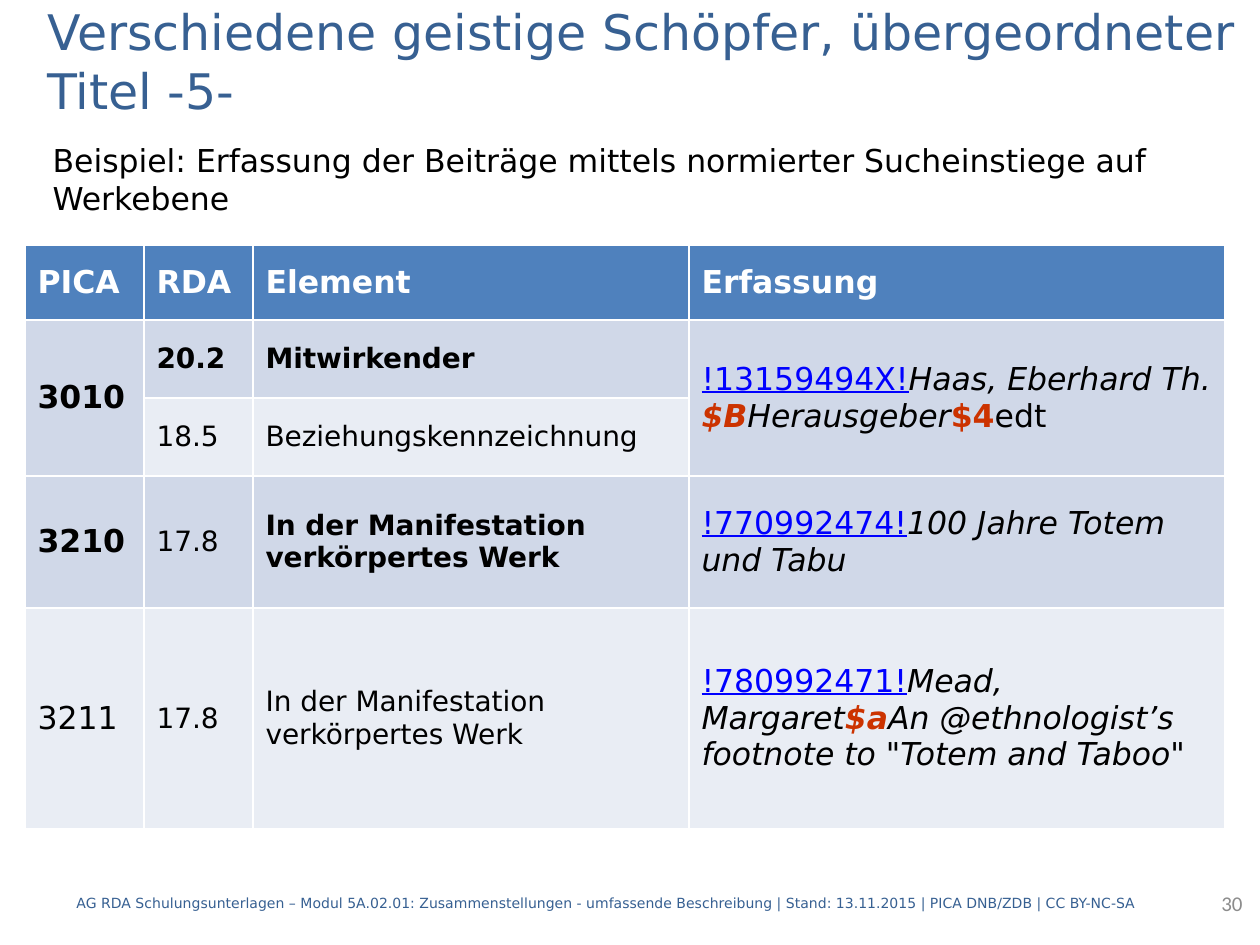
from pptx import Presentation
from pptx.dml.color import RGBColor
from pptx.enum.text import MSO_ANCHOR, MSO_AUTO_SIZE, PP_ALIGN
from pptx.util import Emu, Pt

FONT = "DejaVu Sans"
BLACK, WHITE, NAVY, GREY = "000000", "FFFFFF", "376092", "8C8C8C"
HEAD, BAND, PALE = "4F81BD", "D0D8E8", "E9EDF4"
BOLD = {"bold": True}
ITALIC = {"italic": True}
SMALL = {"size": Pt(16)}
LINK = {"color": "0000FF", "underline": True}
CODE = {"color": "CC3300", "bold": True}
WORK = "In der Manifestation verkörpertes Werk"


def px(n):
    return Emu(round(n * 914400 / 126))


def rgb(value):
    return RGBColor.from_string(value)


class Deck:
    """Holds the style and the current slide."""

    def __init__(self):
        self.prs = Presentation()
        self.prs.slide_width, self.prs.slide_height = px(1260), px(945)
        self.s = self.prs.slides.add_slide(self.prs.slide_layouts[1])

    def add_runs(self, tf, runs, fmt, align=PP_ALIGN.LEFT, gap=0):
        p = tf.paragraphs[0]
        p.alignment = align
        p.space_before = p.space_after = Pt(gap)
        for text, own in runs:
            r = p.add_run()
            r.text = text
            style = {"name": FONT, "color": BLACK, "bold": False, **fmt, **own}
            r.font.color.rgb = rgb(style.pop("color"))
            for name, value in style.items():
                setattr(r.font, name, value)
        return p

    def frame(self, sp, box, text, fmt, anchor=MSO_ANCHOR.MIDDLE, align=PP_ALIGN.LEFT):
        for name, value in zip(("left", "top", "width", "height"), box):
            setattr(sp, name, px(value))
        tf = sp.text_frame
        tf.word_wrap = True
        tf.auto_size = MSO_AUTO_SIZE.NONE
        tf.vertical_anchor = anchor
        return self.add_runs(tf, [(text, {})], fmt, align)

    def title(self, box, text, fmt):
        self.frame(self.s.shapes.title, box, text, fmt)

    def body(self, box, text, fmt):
        sp = self.s.placeholders[1]
        sp.fill.solid()
        sp.fill.fore_color.rgb = rgb(WHITE)
        pPr = self.frame(sp, box, text, fmt, MSO_ANCHOR.TOP)._p.get_or_add_pPr()
        pPr.set("marL", "0")
        pPr.set("indent", "0")
        pPr.append(pPr.makeelement(
            "{http://schemas.openxmlformats.org/drawingml/2006/main}buNone", {}))

    def text(self, box, text, fmt, align=PP_ALIGN.LEFT):
        sp = self.s.shapes.add_textbox(0, 0, 0, 0)
        self.frame(sp, box, text, fmt, align=align)

    def cell(self, cell, runs, fill, fmt, gap):
        cell.fill.solid()
        cell.fill.fore_color.rgb = rgb(fill)
        cell.vertical_anchor = MSO_ANCHOR.MIDDLE
        self.add_runs(cell.text_frame, runs, {"size": Pt(18), **fmt}, gap=gap)

    def table(self, left, top, widths, heights, rows, fills, merges):
        tbl = self.s.shapes.add_table(len(rows), len(widths), px(left), px(top),
                                      px(sum(widths)), px(sum(heights))).table
        for col, width in zip(tbl.columns, widths):
            col.width = px(width)
        for row, height in zip(tbl.rows, heights):
            row.height = px(height)
        for start, end in merges:
            tbl.cell(*start).merge(tbl.cell(*end))
        for i, (row, fill) in enumerate(zip(rows, fills)):
            fmt, gap = ({}, 6) if i else ({"color": WHITE, "bold": True}, 0)
            for j, runs in enumerate(row):
                if runs:
                    self.cell(tbl.cell(i, j), runs, fill, fmt, gap)


def main():
    deck = Deck()
    deck.title((35, 25, 1225, 71),
               "Verschiedene geistige Schöpfer, übergeordneter Titel -5-",
               {"size": Pt(28), "color": NAVY})
    deck.body((40, 135, 1150, 89),
              "Beispiel: Erfassung der Beiträge mittels normierter Sucheinstiege auf Werkebene",
              {"size": Pt(18)})
    rows = [
        [[(head, {})] for head in ("PICA", "RDA", "Element", "Erfassung")],
        [[("3010", BOLD)], [("20.2", SMALL | BOLD)], [("Mitwirkender", SMALL | BOLD)],
         [("!13159494X!", LINK), ("Haas, Eberhard Th.", ITALIC), (" $B", CODE | ITALIC),
          ("Herausgeber", ITALIC), ("$4", CODE), ("edt", {})]],
        [None, [("18.5", SMALL)], [("Beziehungskennzeichnung", SMALL)], None],
        [[("3210", BOLD)], [("17.8", SMALL)], [(WORK, SMALL | BOLD)],
         [("!770992474!", LINK), ("100 Jahre Totem und Tabu", ITALIC)]],
        [[("3211", {})], [("17.8", SMALL)], [(WORK, SMALL)],
         [("!780992471!", LINK), ("Mead, Margaret", ITALIC), ("$a", CODE | ITALIC),
          ("An @ethnologist’s footnote to \"Totem and Taboo\"", ITALIC)]],
    ]
    deck.table(25, 245, (119, 109, 436, 536), (75, 78, 78, 132, 221), rows,
               (HEAD, BAND, PALE, BAND, PALE),
               [((1, 0), (2, 0)), ((1, 3), (2, 3))])
    deck.text((64, 878, 1150, 50),
              "AG RDA Schulungsunterlagen – Modul 5A.02.01: Zusammenstellungen - umfassende "
              "Beschreibung | Stand: 13.11.2015 | PICA DNB/ZDB | CC BY-NC-SA",
              {"size": Pt(8), "color": NAVY})
    deck.text((997, 878, 258, 50), "30",
              {"size": Pt(12), "color": GREY, "name": "Calibri"}, PP_ALIGN.RIGHT)
    deck.prs.save("out.pptx")


if __name__ == "__main__":
    main()
